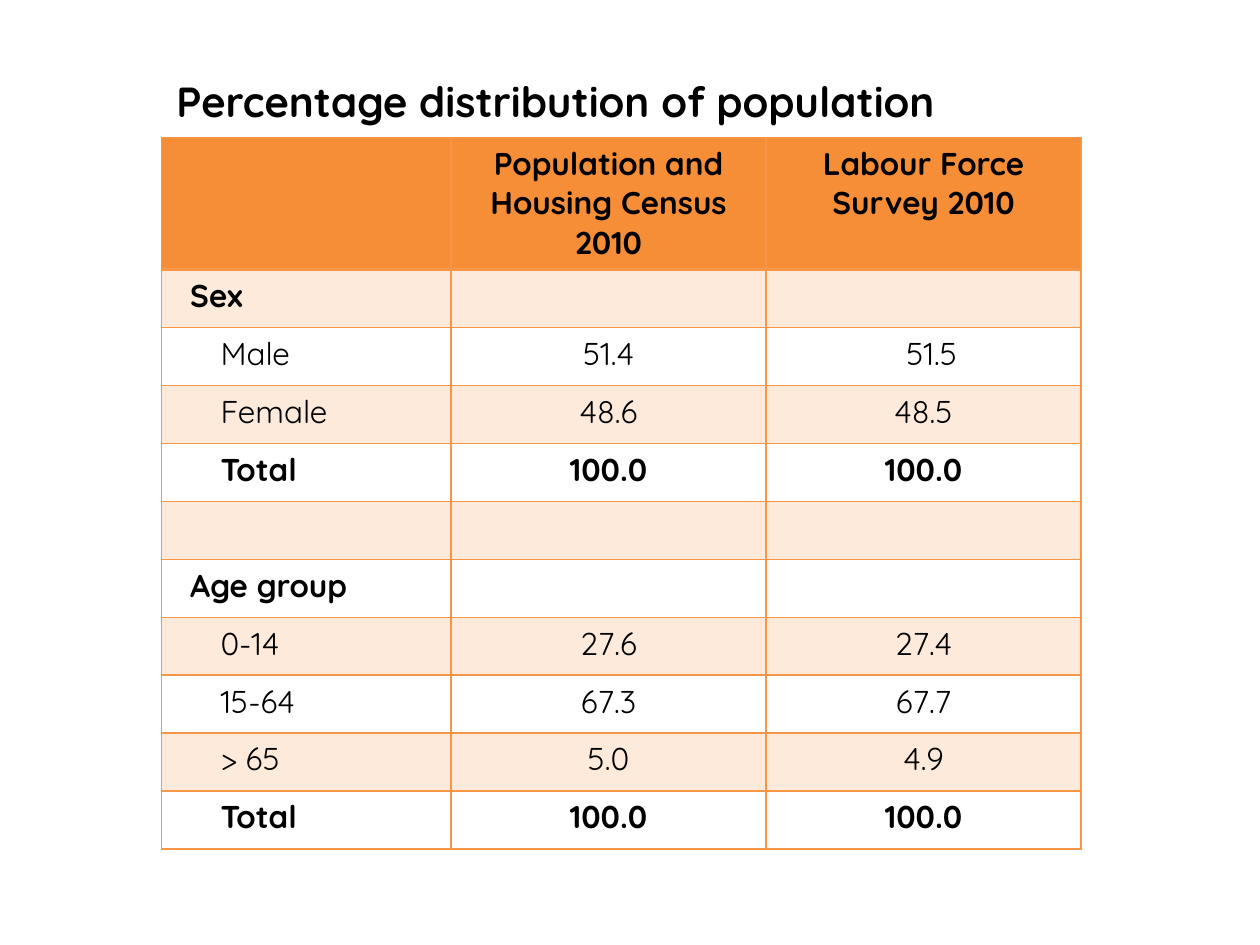
from lxml.etree import SubElement
from pptx import Presentation
from pptx.dml.color import RGBColor
from pptx.enum.text import MSO_ANCHOR, PP_ALIGN
from pptx.oxml.ns import qn
from pptx.util import Inches, Pt

FONT = "Quicksand"
INK, HEAD, EDGE = "000000", "F68E38", "F79646"
WIDTHS = [2.3, 2.5, 2.5]
HEAD_H, ROW_H = 1.05, 0.46
GROUP, ITEM = 0.13, 0.37  # label indents

# Label, census, survey, label indent, bold
ROWS = [
    ("", "Population and Housing Census 2010", "Labour Force Survey 2010", 0, True),
    ("Sex", "", "", GROUP, True),
    ("Male", "51.4", "51.5", ITEM, False),
    ("Female", "48.6", "48.5", ITEM, False),
    ("Total", "100.0", "100.0", ITEM, True),
    ("", "", "", 0, False),
    ("Age group", "", "", GROUP, True),
    ("0-14", "27.6", "27.4", ITEM, False),
    ("15-64", "67.3", "67.7", ITEM, False),
    ("> 65", "5.0", "4.9", ITEM, False),
    ("Total", "100.0", "100.0", ITEM, True),
]


def color(code):
    return RGBColor.from_string(code)


def add_run(para, text, size, bold):
    run = para.add_run()
    run.text = text
    font = run.font
    font.name, font.size, font.bold = FONT, Pt(size), bold
    font.color.rgb = color(INK)


def add_title(slide, left, top, width, height):
    title = slide.shapes.title
    title.left, title.top = Inches(left), Inches(top)
    title.width, title.height = Inches(width), Inches(height)
    frame = title.text_frame
    frame.word_wrap = False
    frame.vertical_anchor = MSO_ANCHOR.TOP
    para = frame.paragraphs[0]
    para.alignment = PP_ALIGN.LEFT
    add_run(para, "Percentage distribution of population", 24, True)


def set_edges(cell, row):
    props = cell._tc.get_or_add_tcPr()
    thick = {"T": row == 1, "B": row == 0}  # rule under the header
    for side in "LRTB":
        width = Pt(2 if thick.get(side) else 1)
        line = SubElement(props, qn(f"a:ln{side}"), w=str(width))
        fill = SubElement(line, qn("a:solidFill"))
        SubElement(fill, qn("a:srgbClr"), val=EDGE)


def set_fill(cell, row):
    if row and row % 2 == 0:
        cell.fill.background()
        return
    cell.fill.solid()
    cell.fill.fore_color.rgb = color(EDGE if row else HEAD)
    if row:  # light band
        tint = cell._tc.tcPr.find(f"{qn('a:solidFill')}/{qn('a:srgbClr')}")
        SubElement(tint, qn("a:alpha"), val="20000")


def set_text(cell, text, col, indent, bold):
    para = cell.text_frame.paragraphs[0]
    para.font.size = Pt(18)
    para.font.name = FONT
    if not text:
        return
    para.alignment = PP_ALIGN.CENTER if col else PP_ALIGN.LEFT
    if indent:
        props = para._p.get_or_add_pPr()
        props.set("marL", str(Inches(indent)))
        props.set("indent", "0")
    if col and indent:
        para.space_before = Pt(12)
    add_run(para, text, 18, bold)


def add_grid(slide, left, top):
    height = HEAD_H + ROW_H * (len(ROWS) - 1)
    table = slide.shapes.add_table(
        len(ROWS), len(WIDTHS), Inches(left), Inches(top),
        Inches(sum(WIDTHS)), Inches(height)).table
    table.first_row = table.horz_banding = False
    for col, width in zip(table.columns, WIDTHS):
        col.width = Inches(width)
    for r, (*texts, indent, bold) in enumerate(ROWS):
        table.rows[r].height = Inches(ROW_H if r else HEAD_H)
        for c, text in enumerate(texts):
            cell = table.cell(r, c)
            set_edges(cell, r)
            set_fill(cell, r)
            # The first survey value is also indented
            shift = GROUP if (r, c) == (2, 2) else 0
            set_text(cell, text, c, shift if c else indent, bold)


def main():
    deck = Presentation()
    deck.slide_width, deck.slide_height = Inches(10), Inches(7.5)
    slide = deck.slides.add_slide(deck.slide_layouts[5])
    add_title(slide, 1.3, 0.55, 6.3, 0.5)
    add_grid(slide, 1.28, 1.09)
    deck.save("out.pptx")


if __name__ == "__main__":
    main()
